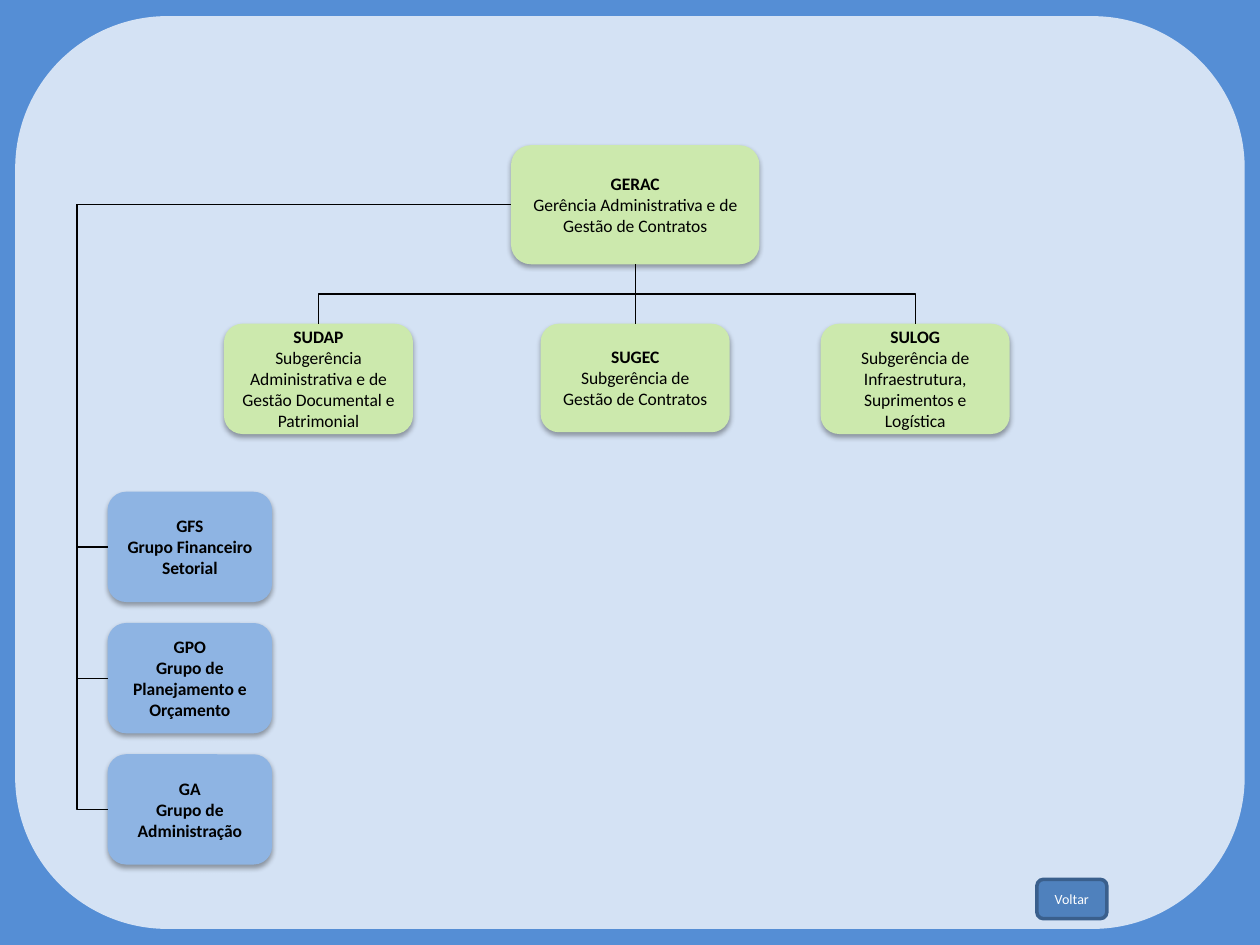
from lxml import etree
from pptx import Presentation
from pptx.dml.color import RGBColor
from pptx.enum.shapes import MSO_CONNECTOR, MSO_SHAPE
from pptx.enum.text import MSO_ANCHOR, PP_ALIGN
from pptx.oxml.ns import qn
from pptx.util import Pt

ROUND = MSO_SHAPE.ROUNDED_RECTANGLE
ELBOW, STRAIGHT = MSO_CONNECTOR.ELBOW, MSO_CONNECTOR.STRAIGHT
MIDDLE, CENTER = MSO_ANCHOR.MIDDLE, PP_ALIGN.CENTER
BOTTOM, TOP = 2, 0

COLORS = {
    "back": "558ED5", "panel": "D4E2F4", "unit": "CCE9AD", "group": "8EB4E3",
    "button": "4F81BD", "edge": "3A5F8C", "ink": "000000", "white": "FFFFFF",
}


def paint(name):
    return RGBColor.from_string(COLORS[name])


def node(parent, tag, **attrs):
    return etree.SubElement(parent, qn(tag), attrs)


def write(frame, text, size=10, color="ink", bold=False, first=True):
    """Add one centred paragraph to the frame."""
    para = frame.paragraphs[0] if first else frame.add_paragraph()
    para.alignment = CENTER
    run = para.add_run()
    run.text = text
    font = run.font
    font.name, font.size, font.bold = "Calibri", Pt(size), bold
    font.color.rgb = paint(color)


class Chart:
    font = "Calibri"
    line = 0.75

    def __init__(self, slide):
        self.slide = slide
        fill = slide.background.fill
        fill.solid()
        fill.fore_color.rgb = paint("back")

    def box(self, x, y, w, h, fill, edge=None):
        shape = self.slide.shapes.add_shape(ROUND, Pt(x), Pt(y), Pt(w), Pt(h))
        shape.shadow.inherit = False
        shape.fill.solid()
        shape.fill.fore_color.rgb = paint(fill)
        if edge:
            shape.line.color.rgb = paint(edge)
            shape.line.width = Pt(2)
        else:
            shape.line.fill.background()
        shape.text_frame.word_wrap = True
        shape.text_frame.vertical_anchor = MIDDLE
        return shape

    def unit(self, x, y, w, h, code, name, fill="unit", bold=False):
        """Draw a shadowed box with a bold code above its name."""
        shape = self.box(x, y, w, h, fill)
        effects = shape._element.spPr.find(qn("a:effectLst"))
        shadow = node(effects, "a:outerShdw", blurRad=str(Pt(3.1)),
                      dist=str(Pt(1.8)), dir="5400000", rotWithShape="0")
        color = node(shadow, "a:srgbClr", val=COLORS["ink"])
        node(color, "a:alpha", val="35000")
        write(shape.text_frame, code, bold=True)
        write(shape.text_frame, name, bold=bold, first=False)
        return shape

    def link(self, kind, x1, y1, x2, y2):
        line = self.slide.shapes.add_connector(kind, Pt(x1), Pt(y1), Pt(x2), Pt(y2))
        line.line.color.rgb = paint("ink")
        line.line.width = Pt(self.line)
        node(line._element.spPr, "a:effectLst")
        return line

    def drop(self, x1, y1, x2, y2):
        """Draw an elbow that leaves downwards, as a turned sideways elbow."""
        mid_x, mid_y = (x1 + x2) / 2, (y1 + y2) / 2
        half_w, half_h = (y2 - y1) / 2, abs(x2 - x1) / 2
        side = 1 if x2 > x1 else -1
        line = self.link(ELBOW, mid_x + side * half_w, mid_y - half_h,
                         mid_x - side * half_w, mid_y + half_h)
        turn = 270 if side > 0 else 90
        line._element.spPr.find(qn("a:xfrm")).set("rot", str(turn * 60000))

    def rail(self, x1, y1, x2, y2, bend):
        """Draw an elbow that runs out to x = bend and comes back."""
        line = self.link(ELBOW, x1, y1, x2, y2)
        geom = line._element.spPr.find(qn("a:prstGeom"))
        guides = geom.find(qn("a:avLst"))
        if guides is None:
            guides = node(geom, "a:avLst")
        ratio = round((bend - x1) / (x2 - x1) * 100000)
        node(guides, "a:gd", name="adj1", fmla=f"val {ratio}")


def main():
    deck = Presentation()
    deck.slide_width, deck.slide_height = Pt(720), Pt(540)
    chart = Chart(deck.slides.add_slide(deck.slide_layouts[6]))
    chart.box(8.7, 9.2, 702.6, 521.6, "panel")

    head_x, head_y, head_w, head_h = 292, 83, 142, 68
    head = chart.unit(head_x, head_y, head_w, head_h, "GERAC",
                      "Gerência Administrativa e de Gestão de Contratos")
    mid, base = head_x + head_w / 2, head_y + head_h

    row, wide, high = 185, 108, 63
    units = [
        (128, high, "SUDAP",
         "Subgerência Administrativa e de Gestão Documental e Patrimonial"),
        (309, 62, "SUGEC", "Subgerência de Gestão de Contratos"),
        (469, high, "SULOG",
         "Subgerência de Infraestrutura, Suprimentos e Logística"),
    ]
    for x, h, code, name in units:
        unit = chart.unit(x, row, wide, h, code, name)
        end = x + wide / 2
        if end == mid:
            line = chart.link(STRAIGHT, mid, base, end, row)
            line.begin_connect(head, BOTTOM)
            line.end_connect(unit, TOP)
        else:
            chart.drop(mid, base, end, row)

    groups = [
        ("GFS", "Grupo Financeiro Setorial"),
        ("GPO", "Grupo de Planejamento e Orçamento"),
        ("GA", "Grupo de Administração"),
    ]
    left, top, step = 61.5, 281, 75
    for i, (code, name) in enumerate(groups):
        y = top + i * step
        chart.unit(left, y, 94, high, code, name, fill="group", bold=True)
        chart.rail(head_x, head_y + head_h / 2, left, y + high / 2, bend=44)

    back = chart.box(592.5, 502.5, 40, 22.5, "button", edge="edge")
    write(back.text_frame, "Voltar", size=8, color="white")
    deck.save("out.pptx")


if __name__ == "__main__":
    main()
